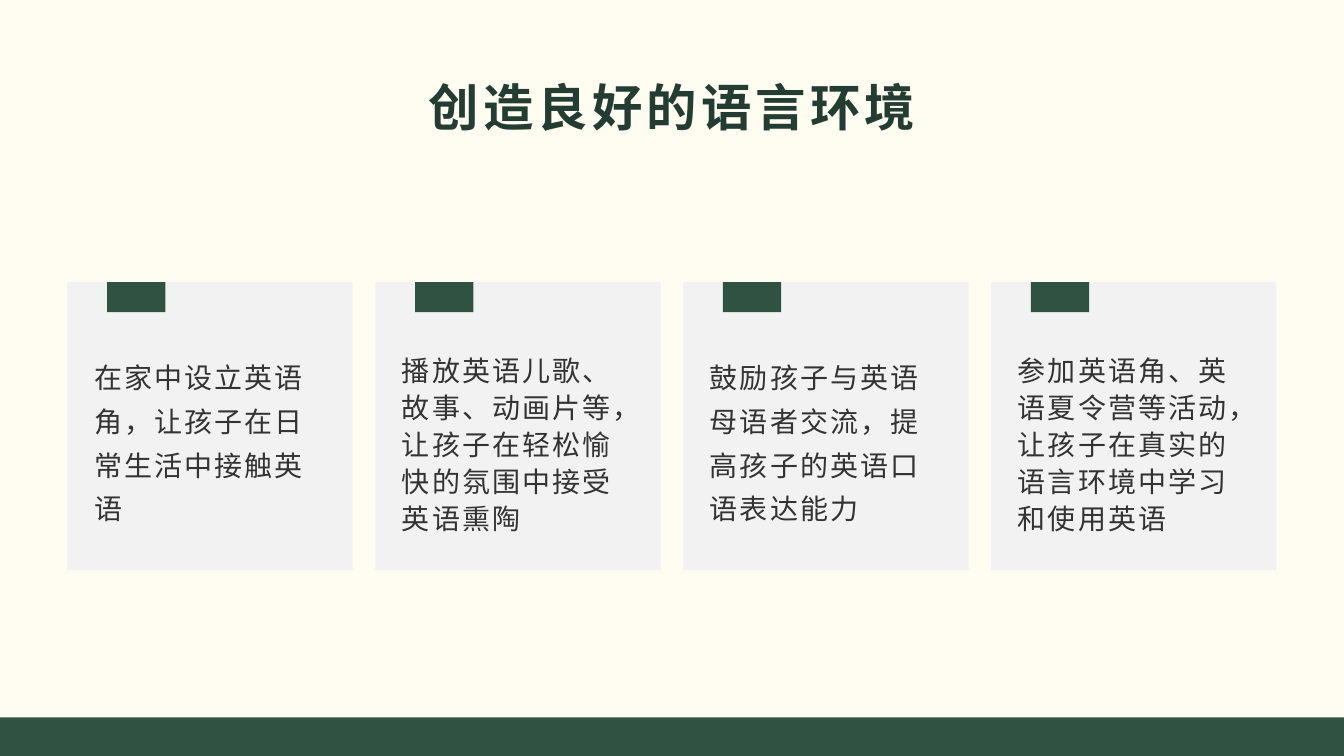
from lxml.etree import SubElement
from pptx import Presentation
from pptx.dml.color import RGBColor
from pptx.enum.shapes import MSO_SHAPE
from pptx.enum.text import MSO_ANCHOR, MSO_AUTO_SIZE, PP_ALIGN
from pptx.oxml.ns import qn
from pptx.util import Cm, Pt

RECTANGLE = MSO_SHAPE.RECTANGLE
CENTER = PP_ALIGN.CENTER
MIDDLE, TOP = MSO_ANCHOR.MIDDLE, MSO_ANCHOR.TOP
SHRINK, NO_FIT = MSO_AUTO_SIZE.TEXT_TO_FIT_SHAPE, MSO_AUTO_SIZE.NONE

FONT = "Noto Sans CJK SC"
CREAM, GREEN, DARK_GREEN = "FFFCF2", "305242", "243D32"
PALE_GREY, TEXT_GREY = "F2F2F2", "333333"
PAGE_WIDTH, PAGE_HEIGHT = 33.87, 19.05
CARD_LEFT, CARD_TOP, CARD_PITCH = 1.7, 7.11, 7.76
CARD_WIDTH, CARD_HEIGHT = 7.19, 7.26

TITLE = "创造良好的语言环境"
CARDS = [
    ("在家中设立英语角，让孩子在日常生活中接触英语", 1.3),
    ("播放英语儿歌、故事、动画片等，让孩子在轻松愉快的氛围中接受英语熏陶", 1.1),
    ("鼓励孩子与英语母语者交流，提高孩子的英语口语表达能力", 1.3),
    ("参加英语角、英语夏令营等活动，让孩子在真实的语言环境中学习和使用英语", 1.1),
]


def paint(color_format, color):
    """Apply a hex colour to a colour format."""
    color_format.rgb = RGBColor.from_string(color)


def add_block(page, left, top, width, height, color):
    """Add a plain filled rectangle."""
    block = page.shapes.add_shape(RECTANGLE, Cm(left), Cm(top), Cm(width), Cm(height))
    block.shadow.inherit = False
    block.fill.solid()
    paint(block.fill.fore_color, color)
    block.line.fill.background()


def style_paragraph(para, size, color, bold, tracking):
    """Set the font, its East Asian face and letter spacing of a paragraph."""
    font = para.font
    font.name, font.size, font.bold = FONT, Pt(size), bold
    paint(font.color, color)
    properties = para._p.pPr.find(qn("a:defRPr"))
    properties.set("spc", str(int(tracking * 100)))
    SubElement(properties, qn("a:ea"), typeface=FONT)


def fill_title(page, left, top, width, height):
    """Place and format the title placeholder."""
    title = page.shapes.title
    title.left, title.top, title.width, title.height = map(Cm, (left, top, width, height))
    frame = title.text_frame
    frame.text = TITLE
    frame.vertical_anchor, frame.auto_size = MIDDLE, NO_FIT
    para = frame.paragraphs[0]
    para.alignment = CENTER
    style_paragraph(para, 36, DARK_GREEN, True, 3)


def add_card(page, left, top, width, height, text, line_spacing):
    """Add a card with its tab and its text."""
    add_block(page, left, top, width, height, PALE_GREY)
    add_block(page, left + 1, top, 1.47, 0.76, GREEN)
    box = page.shapes.add_textbox(Cm(left + 0.42), Cm(top + 1.6), Cm(width - 0.87), Cm(height - 2.15))
    frame = box.text_frame
    frame.text = text
    frame.word_wrap = True
    frame.vertical_anchor, frame.auto_size = TOP, SHRINK
    para = frame.paragraphs[0]
    para.line_spacing = line_spacing
    style_paragraph(para, 20, TEXT_GREY, False, 1.5)


def build_page(deck):
    """Build the slide with its title, card row and bottom bar."""
    page = deck.slides.add_slide(deck.slide_layouts[5])
    page.background.fill.solid()
    paint(page.background.fill.fore_color, CREAM)
    add_block(page, 0, PAGE_HEIGHT - 0.97, PAGE_WIDTH, 0.97, GREEN)
    fill_title(page, 1.7, 1.7, 30.48, 1.96)
    for index, (text, line_spacing) in enumerate(CARDS):
        left = CARD_LEFT + index * CARD_PITCH
        add_card(page, left, CARD_TOP, CARD_WIDTH, CARD_HEIGHT, text, line_spacing)


def main():
    """Create and save the deck."""
    deck = Presentation()
    deck.slide_width, deck.slide_height = Cm(PAGE_WIDTH), Cm(PAGE_HEIGHT)
    build_page(deck)
    deck.save("out.pptx")


if __name__ == "__main__":
    main()
